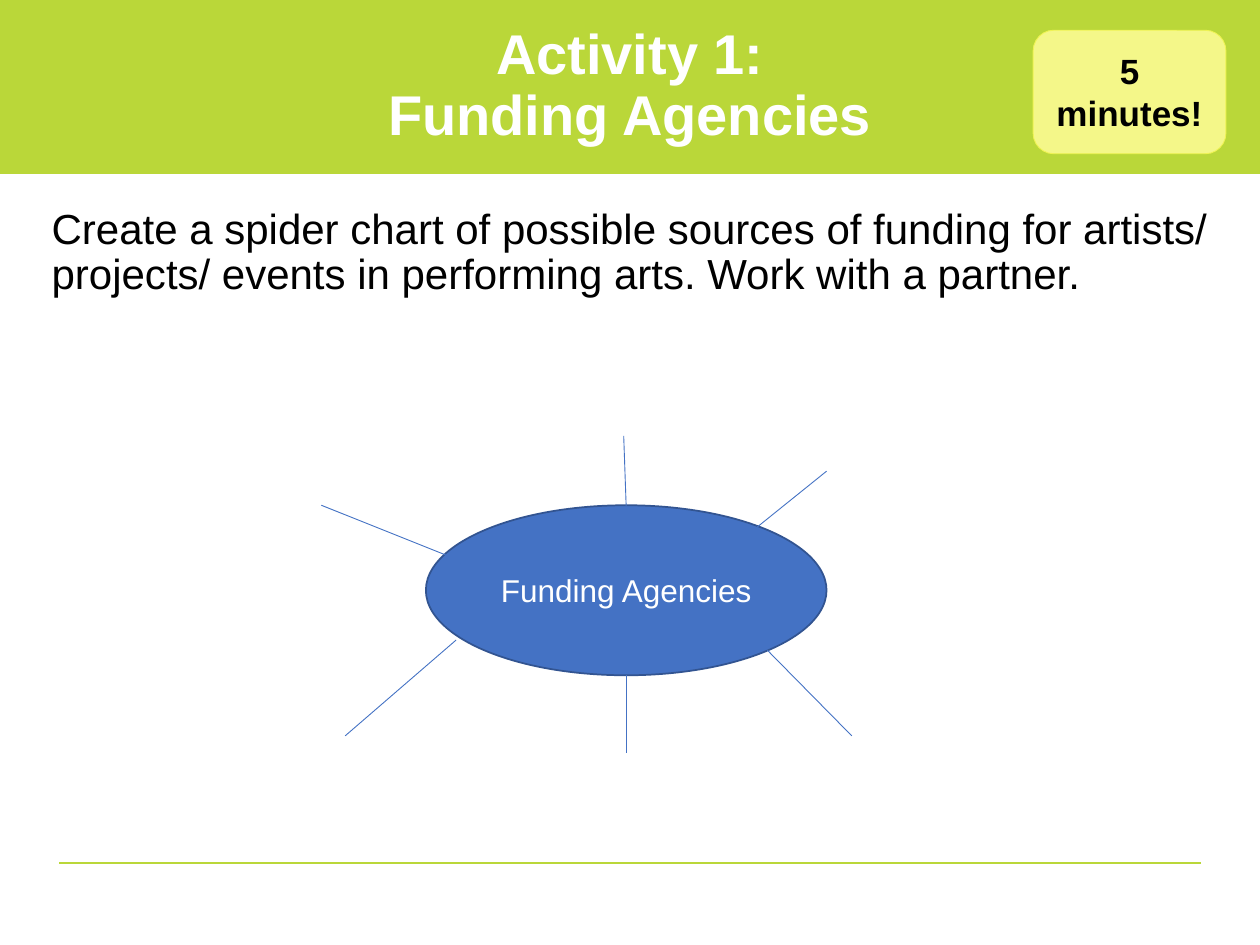
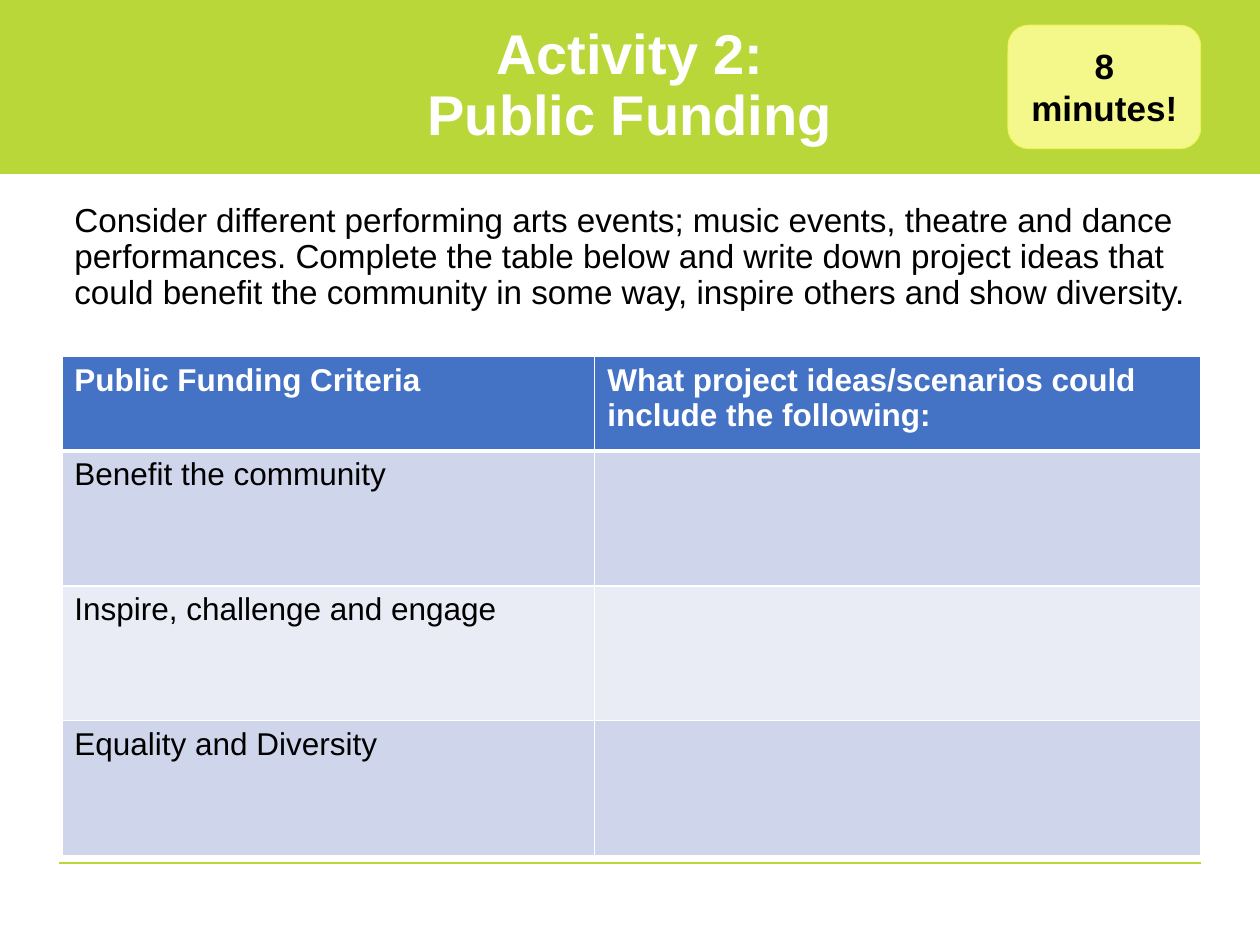
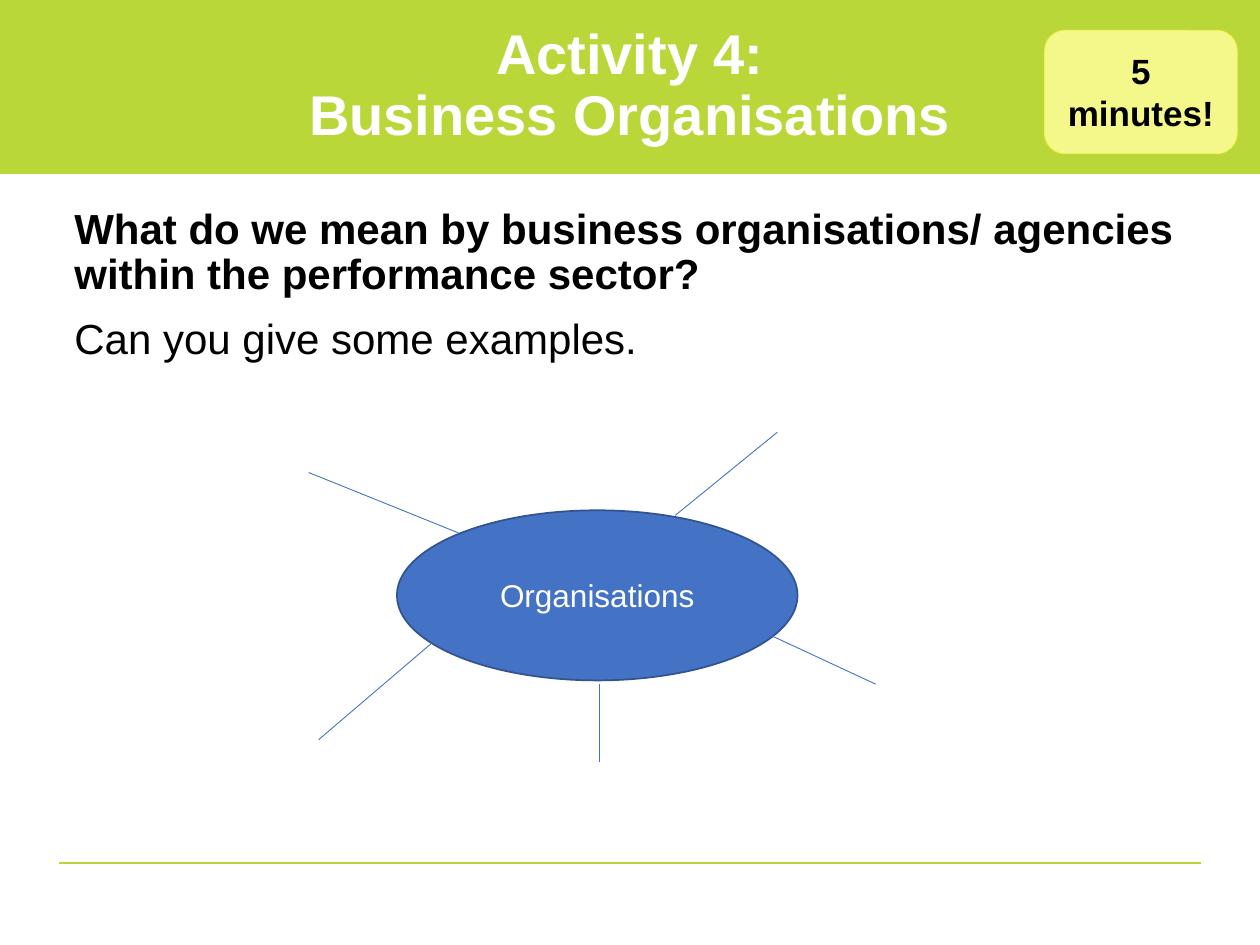
from dataclasses import dataclass

from lxml import etree
from pptx import Presentation
from pptx.dml.color import RGBColor
from pptx.enum.shapes import MSO_CONNECTOR, MSO_SHAPE
from pptx.enum.text import MSO_ANCHOR, MSO_AUTO_SIZE, PP_ALIGN
from pptx.oxml.ns import qn
from pptx.util import Inches, Pt

STRAIGHT = MSO_CONNECTOR.STRAIGHT
RECTANGLE, ROUNDED, OVAL = MSO_SHAPE.RECTANGLE, MSO_SHAPE.ROUNDED_RECTANGLE, MSO_SHAPE.OVAL
MIDDLE, TOP = MSO_ANCHOR.MIDDLE, MSO_ANCHOR.TOP
CENTER, LEFT = PP_ALIGN.CENTER, PP_ALIGN.LEFT
NO_AUTOFIT = MSO_AUTO_SIZE.NONE

COLORS = {
    "band": "BAD739", "timer": "F4F789", "timer edge": "EFF353",
    "blue": "4472C4", "blue edge": "325491",
    "row dark": "CFD5EA", "row light": "E9EBF5",
    "white": "FFFFFF", "black": "000000",
}
FONT = "Arial"

# Grid: 100 columns by 75 rows
SLIDE_WIDTH, SLIDE_HEIGHT = Inches(10), Inches(7.5)
COLUMN, ROW = SLIDE_WIDTH / 100, SLIDE_HEIGHT / 75
BAND_ROWS = 13.8
TIMER_SIZE = (15.3, 9.8)
HUB_SIZE = (31.8, 13.5)

Point = tuple[float, float]


@dataclass(frozen=True)
class Box:
    left: float
    top: float
    width: float
    height: float

    def lengths(self) -> tuple[int, int, int, int]:
        return (round(self.left * COLUMN), round(self.top * ROW),
                round(self.width * COLUMN), round(self.height * ROW))


@dataclass(frozen=True)
class Line:
    text: str
    bold: bool = False


@dataclass(frozen=True)
class Spider:
    label: str
    corner: Point
    spokes: tuple[tuple[Point, Point], ...]


@dataclass(frozen=True)
class Activity:
    number: int
    topic: str
    minutes: int
    timer_corner: Point
    body: Box
    body_size: int
    lines: tuple[Line, ...]
    spider: Spider | None = None
    criteria: tuple[str, ...] = ()


ACTIVITIES = (
    Activity(
        1, "Funding Agencies", 5, (82, 2.4), Box(3.1, 16, 94.2, 51.7), 24,
        (Line("Create a spider chart of possible sources of funding for artists/ "
              "projects/ events in performing arts. Work with a partner."),),
        spider=Spider("Funding Agencies", (33.8, 40.1), (
            ((57.4, 44), (65.6, 37.4)),
            ((60.9, 51.6), (67.6, 58.4)),
            ((49.7, 40.2), (49.5, 34.6)),
            ((49.7, 53.6), (49.7, 59.8)),
            ((37.5, 44.9), (25.5, 40.1)),
            ((36.2, 50.8), (27.4, 58.4)),
        )),
    ),
    Activity(
        2, "Public Funding", 8, (80, 2), Box(4.9, 15.7, 92.4, 57.3), 19,
        (Line("Consider different performing arts events; music events, theatre and "
              "dance performances. Complete the table below and write down project "
              "ideas that could benefit the community in some way, inspire others "
              "and show diversity."),),
        criteria=("Benefit the community", "Inspire, challenge and engage",
                  "Equality and Diversity"),
    ),
    Activity(
        4, "Business Organisations", 5, (82.9, 2.4), Box(4.9, 16, 90.4, 51.7), 24,
        (Line("What do we mean by business organisations/ agencies within the "
              "performance sector?", bold=True),
         Line("Can you give some examples.")),
        spider=Spider("Organisations", (31.5, 40.5), (
            ((53.6, 40.9), (61.7, 34.3)),
            ((60.9, 50.3), (69.5, 54.3)),
            ((47.6, 54.3), (47.6, 60.5)),
            ((36.4, 42.3), (24.5, 37.5)),
            ((34.2, 51.1), (25.3, 58.7)),
        )),
    ),
)


def rgb(name: str) -> RGBColor:
    return RGBColor.from_string(COLORS[name])


def format_paragraph(paragraph, size: float, color: str, bold: bool = False,
                     alignment=LEFT) -> None:
    paragraph.alignment = alignment
    font = paragraph.font
    font.name, font.size, font.bold = FONT, Pt(size), bold
    font.color.rgb = rgb(color)


def add_filled_shape(slide, kind, box: Box, fill: str, edge: str | None = None,
                     edge_width: float = 1):
    shape = slide.shapes.add_shape(kind, *box.lengths())
    shape.shadow.inherit = False
    shape.fill.solid()
    shape.fill.fore_color.rgb = rgb(fill)
    if edge:
        shape.line.color.rgb = rgb(edge)
        shape.line.width = Pt(edge_width)
    else:
        shape.line.fill.background()
    return shape


def add_label(shape, text: str, size: float, color: str, bold: bool = False) -> None:
    frame = shape.text_frame
    frame.word_wrap = True
    frame.vertical_anchor = MIDDLE
    frame.text = text
    format_paragraph(frame.paragraphs[0], size, color, bold, CENTER)


def add_line(slide, start: Point, end: Point, color: str, width: float):
    ends = [round(value * unit) for point in (start, end)
            for value, unit in zip(point, (COLUMN, ROW))]
    line = slide.shapes.add_connector(STRAIGHT, *ends)
    line.line.color.rgb = rgb(color)
    line.line.width = Pt(width)
    etree.SubElement(line._element.spPr, qn("a:effectLst"))
    return line


def move_frame_to_layout(slide) -> None:
    """Draw the title band and the bottom rule, and share them through the layout."""
    band = add_filled_shape(slide, RECTANGLE, Box(0, 0, 100, BAND_ROWS), "band")
    rule = add_line(slide, (4.7, 68.5), (95.3, 68.5), "band", 1)
    tree = slide.slide_layout.shapes.element
    for position, shape in enumerate((band, rule), start=2):
        tree.insert(position, shape._element)


def place(placeholder, box: Box, anchor) -> None:
    placeholder.left, placeholder.top, placeholder.width, placeholder.height = box.lengths()
    frame = placeholder.text_frame
    frame.word_wrap = True
    frame.auto_size = NO_AUTOFIT
    frame.vertical_anchor = anchor


def fill_title(slide, activity: Activity) -> None:
    title = slide.shapes.title
    place(title, Box(0, 0, 100, BAND_ROWS), MIDDLE)
    paragraph = title.text_frame.paragraphs[0]
    paragraph.add_run().text = f"Activity {activity.number}:"
    paragraph.add_line_break()
    paragraph.add_run().text = activity.topic
    paragraph.line_spacing = 0.9
    format_paragraph(paragraph, 32, "white", True, CENTER)


def fill_body(slide, activity: Activity) -> None:
    body = slide.placeholders[1]
    place(body, activity.body, TOP)
    frame = body.text_frame
    for index, line in enumerate(activity.lines):
        paragraph = frame.add_paragraph() if index else frame.paragraphs[0]
        paragraph.text = line.text
        paragraph.line_spacing = 0.9
        paragraph.space_before = Pt(11 if index else 0)
        properties = paragraph._p.get_or_add_pPr()
        properties.set("marL", "0")
        properties.set("indent", "0")
        etree.SubElement(properties, qn("a:buNone"))
        format_paragraph(paragraph, activity.body_size, "black", line.bold)


def add_timer(slide, activity: Activity) -> None:
    timer = add_filled_shape(slide, ROUNDED, Box(*activity.timer_corner, *TIMER_SIZE),
                             "timer", "timer edge", 0.5)
    add_label(timer, f"{activity.minutes} minutes!", 20, "black", bold=True)


def add_spider(slide, spider: Spider) -> None:
    hub = add_filled_shape(slide, OVAL, Box(*spider.corner, *HUB_SIZE),
                           "blue", "blue edge")
    add_label(hub, spider.label, 18, "white")
    for start, end in spider.spokes:
        add_line(slide, start, end, "blue", 0.5)


def set_borders(cell, top: float, bottom: float) -> None:
    properties = cell._tc.get_or_add_tcPr()
    for side, width in (("L", 1), ("R", 1), ("T", top), ("B", bottom)):
        border = etree.SubElement(properties, qn(f"a:ln{side}"), w=str(Pt(width)))
        fill = etree.SubElement(border, qn("a:solidFill"))
        etree.SubElement(fill, qn("a:srgbClr"), val=COLORS["white"])


def add_criteria_table(slide, criteria: tuple[str, ...]) -> None:
    rows = [("Public Funding Criteria",
             "What project ideas/scenarios could include the following:")]
    rows += [(criterion, "") for criterion in criteria]
    table = slide.shapes.add_table(len(rows), 2,
                                   *Box(4.9, 28.3, 90.4, 39.6).lengths()).table
    for column, width in zip(table.columns, (42.3, 48.1)):
        column.width = round(width * COLUMN)
    for index, texts in enumerate(rows):
        header = index == 0
        table.rows[index].height = round((7.5 if header else 10.7) * ROW)
        fill = "blue" if header else ("row light", "row dark")[index % 2]
        for cell, text in zip(table.rows[index].cells, texts):
            set_borders(cell, top=3 if index == 1 else 1, bottom=3 if header else 1)
            cell.fill.solid()
            cell.fill.fore_color.rgb = rgb(fill)
            cell.text = text
            format_paragraph(cell.text_frame.paragraphs[0], 18,
                             "white" if header else "black", header)


def main() -> None:
    presentation = Presentation()
    presentation.slide_width, presentation.slide_height = SLIDE_WIDTH, SLIDE_HEIGHT
    layout = presentation.slide_layouts[1]
    for index, activity in enumerate(ACTIVITIES):
        slide = presentation.slides.add_slide(layout)
        if index == 0:
            move_frame_to_layout(slide)
        fill_title(slide, activity)
        add_timer(slide, activity)
        fill_body(slide, activity)
        if activity.spider:
            add_spider(slide, activity.spider)
        if activity.criteria:
            add_criteria_table(slide, activity.criteria)
    presentation.save("out.pptx")


if __name__ == "__main__":
    main()
